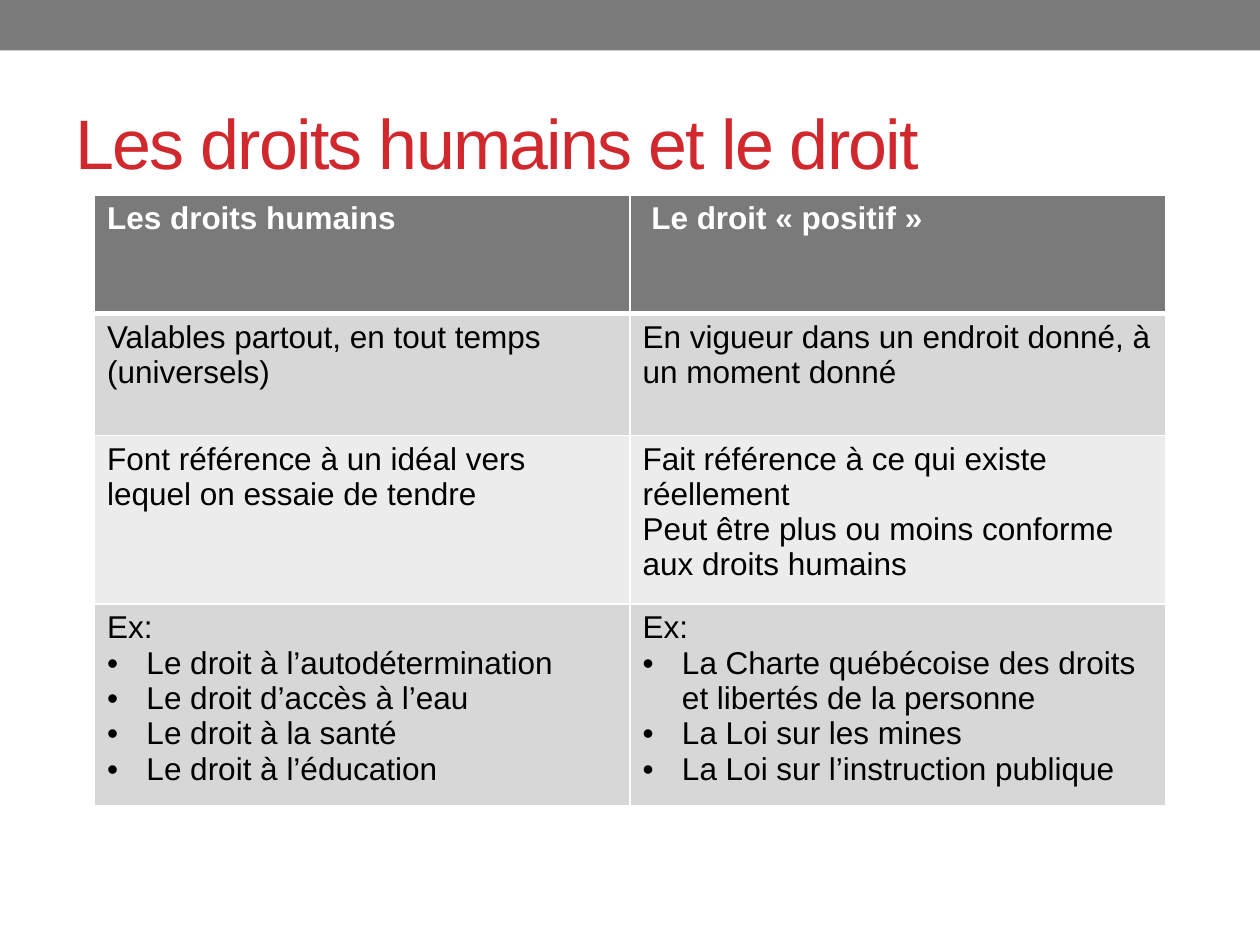
from lxml import etree
from pptx import Presentation
from pptx import util as u
from pptx.dml import color
from pptx.enum import shapes, text
from pptx.oxml import ns

Pt = u.Pt
COLORS = {"grey": "7A7A7A", "red": "D1282E", "white": "FFFFFF",
          "black": "000000", "dark_band": "D7D7D7", "light_band": "ECECEC"}
ROW_HEIGHTS = [67.5, 69.75, 96.5, 107.25]
ROW_FILLS = ["grey", "dark_band", "light_band", "dark_band"]
ROWS = [
    [["Les droits humains"], [" Le droit « positif »"]],
    [["Valables partout, en tout temps (universels)"],
     ["En vigueur dans un endroit donné, à un moment donné"]],
    [["Font référence à un idéal vers lequel on essaie de tendre"],
     ["Fait référence à ce qui existe réellement",
      "Peut être plus ou moins conforme aux droits humains"]],
    [["Ex:", "Le droit à l’autodétermination", "Le droit d’accès à l’eau",
      "Le droit à la santé", "Le droit à l’éducation"],
     ["Ex:", "La Charte québécoise des droits et libertés de la personne",
      "La Loi sur les mines", "La Loi sur l’instruction publique"]],
]


def rgb(name):
    return color.RGBColor.from_string(COLORS[name])


def add_span(para, words, hue, **formats):
    span = para.add_run()
    span.text = words
    span.font.color.rgb = rgb(hue)
    for name, value in {"name": "Arial", **formats}.items():
        setattr(span.font, name, value)
    return span


deck = Presentation()
deck.slide_width, deck.slide_height = Pt(720), Pt(540)
page = deck.slides.add_slide(deck.slide_layouts[6])

band = page.shapes.add_shape(shapes.MSO_SHAPE.RECTANGLE, 0, 0, Pt(720), Pt(28.8))
band.shadow.inherit = False
band.fill.solid()
band.fill.fore_color.rgb = rgb("grey")
band.line.fill.background()

title = page.shapes.add_textbox(Pt(36), Pt(41.75), Pt(648), Pt(77.75))
title.text_frame.word_wrap = True
title.text_frame.vertical_anchor = text.MSO_ANCHOR.MIDDLE
heading = add_span(title.text_frame.paragraphs[0],
                   "Les droits humains et le droit", "red", size=Pt(40))
heading.font._element.set("spc", "-100")

table = page.shapes.add_table(len(ROWS), 2, Pt(54), Pt(111.5),
                              Pt(612), Pt(sum(ROW_HEIGHTS))).table
for row_index, contents in enumerate(ROWS):
    is_header = row_index == 0
    table.rows[row_index].height = Pt(ROW_HEIGHTS[row_index])
    for column_index, lines in enumerate(contents):
        cell = table.cell(row_index, column_index)
        for line_index, words in enumerate(lines):
            frame = cell.text_frame
            para = frame.add_paragraph() if line_index else frame.paragraphs[0]
            add_span(para, words, "white" if is_header else "black",
                     size=Pt(18), bold=is_header)
            if lines[0] == "Ex:" and line_index:
                properties = para._p.get_or_add_pPr()
                properties.set("marL", str(Pt(22.5)))
                properties.set("indent", str(Pt(-22.5)))
                etree.SubElement(properties, ns.qn("a:buFont"), typeface="Arial")
                etree.SubElement(properties, ns.qn("a:buChar"), char="•")
        cell_properties = cell._tc.get_or_add_tcPr()
        for side in "LRTB":
            heavy = (side == "B" and is_header) or (side == "T" and row_index == 1)
            border = etree.SubElement(cell_properties, ns.qn(f"a:ln{side}"),
                                      w=str(Pt(3 if heavy else 1)))
            paint = etree.SubElement(border, ns.qn("a:solidFill"))
            etree.SubElement(paint, ns.qn("a:srgbClr"), val=COLORS["white"])
        cell.fill.solid()
        cell.fill.fore_color.rgb = rgb(ROW_FILLS[row_index])

deck.save("out.pptx")
